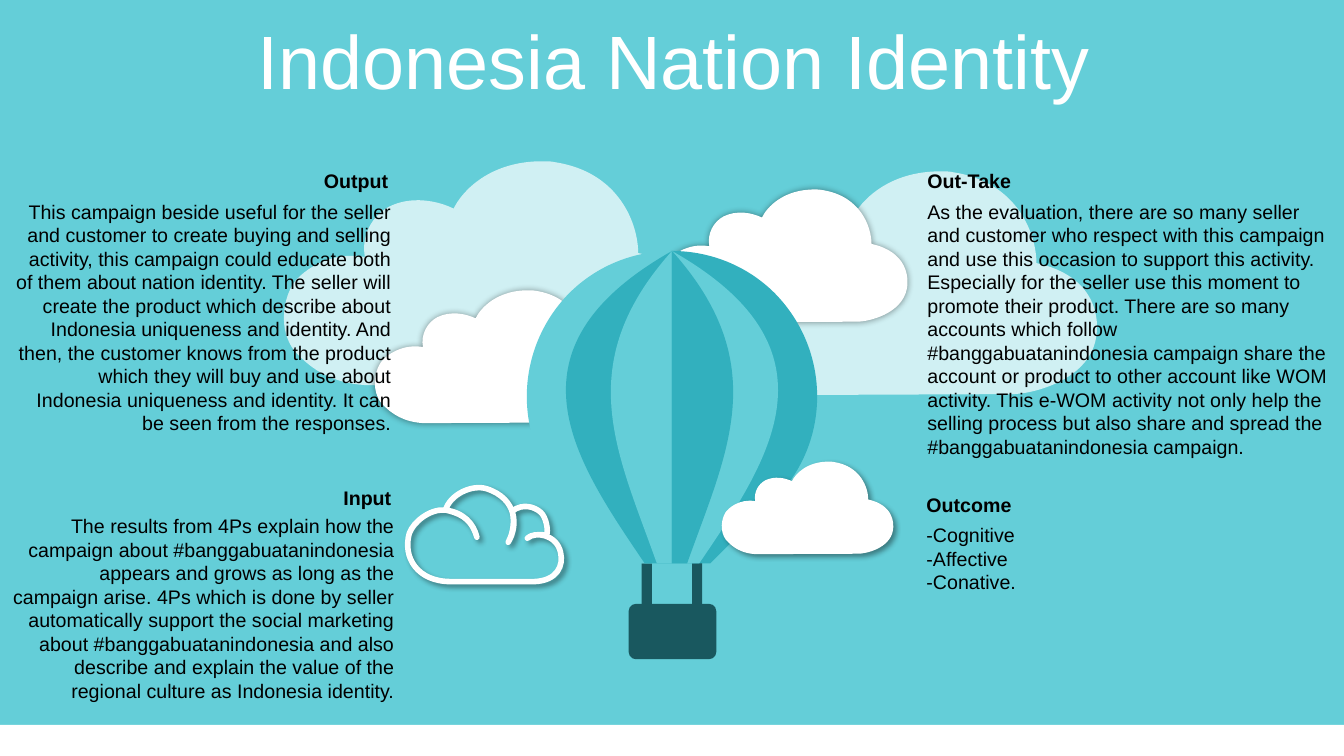
from collections import namedtuple
from dataclasses import dataclass

from lxml import etree
from pptx import Presentation
from pptx import util as u
from pptx.dml.color import RGBColor
from pptx.enum import shapes, text
from pptx.oxml import ns

Box = namedtuple("Box", "left top width height")
Shadow = namedtuple("Shadow", "blur distance angle")


@dataclass(frozen=True)
class Theme:
    sky = RGBColor.from_string("64CED8")
    stripe = RGBColor.from_string("32B0BE")
    basket = RGBColor.from_string("19585F")
    white = RGBColor.from_string("FFFFFF")
    black = RGBColor.from_string("000000")
    font = "Arial"
    title_size = u.Pt(54)
    text_size = u.Pt(14)
    outline = u.Pt(4)
    glow = Shadow(5, 0, 0)
    drop = Shadow(4, 3, 45)


THEME = Theme()

# Outlines in inches: a pair is a corner, six numbers are a Bezier curve.
CLOUD_WIDTH = 4.11
CLOUD = [
    (2.58, 0), (2.61, 0, 2.65, 0, 2.69, 0.01), (3.33, 0.11, 3.51, 0.63, 3.51, 0.91),
    (4.1, 1.04, 4.14, 1.46, 4.1, 1.66), (4.02, 2.08, 3.46, 2.21, 3.27, 2.21),
    (0.8, 2.22), (0.49, 2.2, 0.28, 2.08, 0.1, 1.88), (-0.06, 1.67, -0.01, 1.38, 0.08, 1.23),
    (0.14, 1.12, 0.43, 0.88, 0.8, 0.95), (0.76, 0.74, 0.87, 0.54, 1.04, 0.45),
    (1.26, 0.34, 1.52, 0.39, 1.68, 0.47), (1.76, 0.3, 2.04, -0.01, 2.58, 0),
]
LINE_CLOUD = [
    (0.43, 0.93), (1.26, 0.93), (1.49, 0.92, 1.55, 0.77, 1.52, 0.64),
    (1.48, 0.46, 1.26, 0.43, 1.19, 0.5), (1.23, 0.46, 1.32, 0.46, 1.38, 0.47),
    (1.4, 0.43, 1.38, 0.29, 1.32, 0.24), (1.26, 0.19, 1.15, 0.15, 1.04, 0.23),
    (1.06, 0.31, 1.06, 0.43, 1, 0.54), (1.1, 0.38, 1.09, 0.11, 0.79, 0.01),
    (0.64, -0.04, 0.42, 0.07, 0.38, 0.22), (0.49, 0.25, 0.63, 0.28, 0.69, 0.49),
    (0.66, 0.36, 0.56, 0.24, 0.37, 0.22), (0.22, 0.21, 0.06, 0.34, 0.02, 0.45),
    (-0.05, 0.69, 0.1, 0.93, 0.43, 0.93),
]
# Right half of the balloon, from the outer panel inwards, measured from the top.
PANELS = [
    [(0, 0), (0, 3.1), (0.38, 3.1), (1.02, 2.46),
     (1.58, 1.9, 1.58, 0.99, 1.02, 0.42), (0.74, 0.14, 0.37, 0, 0, 0)],
    [(0, 0), (0, 3.1), (0.27, 3.1), (0.96, 2.08, 1.73, 0.98, 0, 0)],
    [(0, 0), (0, 3.1), (0.15, 3.1), (0.54, 2, 1.01, 1.13, 0, 0)],
]


def flatten(parts, steps=12):
    """Sample each curve, so that the extent of the outline is known."""
    points = list(parts[0])
    for part in parts[1:]:
        knots = [points[-1], *part]
        for t in [step / steps for step in range(1, steps + 1)] if len(part) == 3 else []:
            weights = ((1 - t) ** 3, 3 * t * (1 - t) ** 2, 3 * t * t * (1 - t), t ** 3)
            points.append(tuple(int(sum(w * knot[axis] for w, knot in zip(weights, knots)))
                                for axis in (0, 1)))
        if len(part) == 1:
            points.append(part[0])
    return points


def add_outline(page, outline, left, top, scale_x=1, scale_y=1):
    parts = [[(u.Inches(left + x * scale_x), u.Inches(top + y * scale_y))
              for x, y in zip(part[::2], part[1::2])] for part in outline]
    points = flatten(parts)
    builder = page.shapes.build_freeform(*points[0])
    builder.add_line_segments(points[1:], close=True)
    shape = builder.convert_to_shape()
    track = shape._element.spPr.find(".//" + ns.qn("a:path"))
    del track[:]
    for number, part in enumerate(parts):
        kind = "a:moveTo" if number == 0 else "a:lnTo" if len(part) == 1 else "a:cubicBezTo"
        segment = etree.SubElement(track, ns.qn(kind))
        for x, y in part:
            etree.SubElement(segment, ns.qn("a:pt"), x=str(x - shape.left), y=str(y - shape.top))
    etree.SubElement(track, ns.qn("a:close"))
    return shape


def paint(shape, color, opacity=100):
    shape.shadow.inherit = False
    shape.line.fill.background()
    shape.fill.solid()
    shape.fill.fore_color.rgb = color
    if opacity < 100:
        tint = shape._element.spPr.find(".//" + ns.qn("a:srgbClr"))
        etree.SubElement(tint, ns.qn("a:alpha"), val=str(opacity * 1000))


def cast_shadow(shape, shadow):
    effects = shape._element.spPr.find(ns.qn("a:effectLst"))
    outer = etree.SubElement(
        effects, ns.qn("a:outerShdw"), blurRad=str(u.Pt(shadow.blur)),
        dist=str(u.Pt(shadow.distance)), dir=str(shadow.angle * 60000), algn="ctr")
    tint = etree.SubElement(outer, ns.qn("a:srgbClr"), val=str(THEME.black))
    etree.SubElement(tint, ns.qn("a:alpha"), val="40000")


def add_cloud(page, left, top, width, opacity=100, shadow=None):
    scale = width / CLOUD_WIDTH
    cloud = add_outline(page, CLOUD, left, top, scale, scale)
    paint(cloud, THEME.white, opacity)
    if shadow:
        cast_shadow(cloud, shadow)


def add_line_cloud(page, left, top):
    cloud = add_outline(page, LINE_CLOUD, left, top)
    cloud.shadow.inherit = False
    cloud.fill.background()
    cloud.line.color.rgb = THEME.white
    cloud.line.width = THEME.outline
    cast_shadow(cloud, THEME.drop)


def add_block(page, box, color, kind=shapes.MSO_SHAPE.RECTANGLE):
    block = page.shapes.add_shape(kind, *map(u.Inches, box))
    paint(block, color)
    return block


def add_balloon(page, box):
    """Basket, ropes and two mirrored halves with alternating colours."""
    middle = box.left + box.width / 2
    for offset, top in ((-0.3, 3.1), (0.2, 3.06)):
        add_block(page, Box(middle + offset, box.top + top, 0.1, 0.55), THEME.basket)
    basket = add_block(page, Box(middle - 0.43, box.top + 3.5, 0.87, 0.55),
                       THEME.basket, shapes.MSO_SHAPE.ROUNDED_RECTANGLE)
    basket.adjustments[0] = 0.134
    colors = (THEME.sky, THEME.stripe)
    for half, side in enumerate((-1, 1)):
        for number, panel in enumerate(PANELS):
            paint(add_outline(page, panel, middle, box.top, side), colors[(half + number) % 2])


def style(para, size, color, align, bold=False):
    para.alignment = align
    for span in para.runs:
        span.font.name, span.font.size, span.font.bold = THEME.font, size, bold
        span.font.color.rgb = color


def add_title(page, box, words):
    title = page.shapes.title
    title.left, title.top, title.width, title.height = map(u.Inches, box)
    frame = title.text_frame
    frame.text = words
    frame.auto_size = text.MSO_AUTO_SIZE.NONE
    frame.vertical_anchor = text.MSO_ANCHOR.MIDDLE
    frame.paragraphs[0].line_spacing = 0.9
    style(frame.paragraphs[0], THEME.title_size, THEME.white, text.PP_ALIGN.CENTER)


def add_words(page, box, words, align, bold=False):
    frame = page.shapes.add_textbox(*map(u.Inches, box)).text_frame
    frame.word_wrap = True
    frame.auto_size = text.MSO_AUTO_SIZE.SHAPE_TO_FIT_TEXT
    frame.text = words
    for para in frame.paragraphs:
        style(para, THEME.text_size, THEME.black, align, bold)


def add_section(page, box, heading, body, align, heading_width, gap=0.3):
    add_words(page, Box(box.left, box.top, heading_width, 0.34), heading, align, True)
    add_words(page, Box(box.left, box.top + gap, box.width, box.height - gap), body, align)


def main():
    deck = Presentation()
    deck.slide_width, deck.slide_height = u.Inches(13.33), u.Inches(7.5)
    page = deck.slides.add_slide(deck.slide_layouts[5])
    page.background.fill.solid()
    page.background.fill.fore_color.rgb = THEME.sky
    add_block(page, Box(0, 7.19, 13.33, 0.31), THEME.white)
    add_title(page, Box(0.35, 0.25, 12.66, 0.79), "Indonesia Nation Identity")
    for left, top in ((2.82, 1.6), (6.77, 1.7)):
        add_cloud(page, left, top, CLOUD_WIDTH, opacity=70)
    for left, top in ((3.72, 2.88), (6.56, 1.88)):
        add_cloud(page, left, top, 2.44, shadow=THEME.glow)
    add_line_cloud(page, 4.04, 4.84)
    add_balloon(page, Box(5.23, 2.49, 2.87, 4.05))
    add_cloud(page, 7.16, 4.58, 1.7, shadow=THEME.drop)

    right, left = text.PP_ALIGN.RIGHT, text.PP_ALIGN.LEFT
    add_section(page, Box(0.02, 4.77, 3.99, 2.41), "Input", "The results from 4Ps explain how the campaign about #banggabuatanindonesia appears and grows as long as the campaign arise. 4Ps which is done by seller automatically support the social marketing about #banggabuatanindonesia and also describe and explain the value of the regional culture as Indonesia identity.", right, 3.96, 0.28)
    add_section(page, Box(0.02, 1.63, 3.96, 2.76), "Output", "This campaign beside useful for the seller and customer to create buying and selling activity, this campaign could educate both of them about nation identity. The seller will create the product which describe about Indonesia uniqueness and identity. And then, the customer knows from the product which they will buy and use about Indonesia uniqueness and identity. It can be seen from the responses.", right, 3.93)
    add_section(page, Box(9.1, 1.63, 4.2, 2.98), "Out-Take", "As the evaluation, there are so many seller and customer who respect with this campaign and use this occasion to support this activity. Especially for the seller use this moment to promote their product. There are so many accounts which follow #banggabuatanindonesia campaign share the account or product to other account like WOM activity. This e-WOM activity not only help the selling process but also share and spread the #banggabuatanindonesia campaign.", left, 4.16)
    add_section(page, Box(9.09, 4.84, 3.05, 1.11), "Outcome",
                "-Cognitive\n-Affective\n-Conative.", left, 3.03)
    deck.save("out.pptx")


if __name__ == "__main__":
    main()
